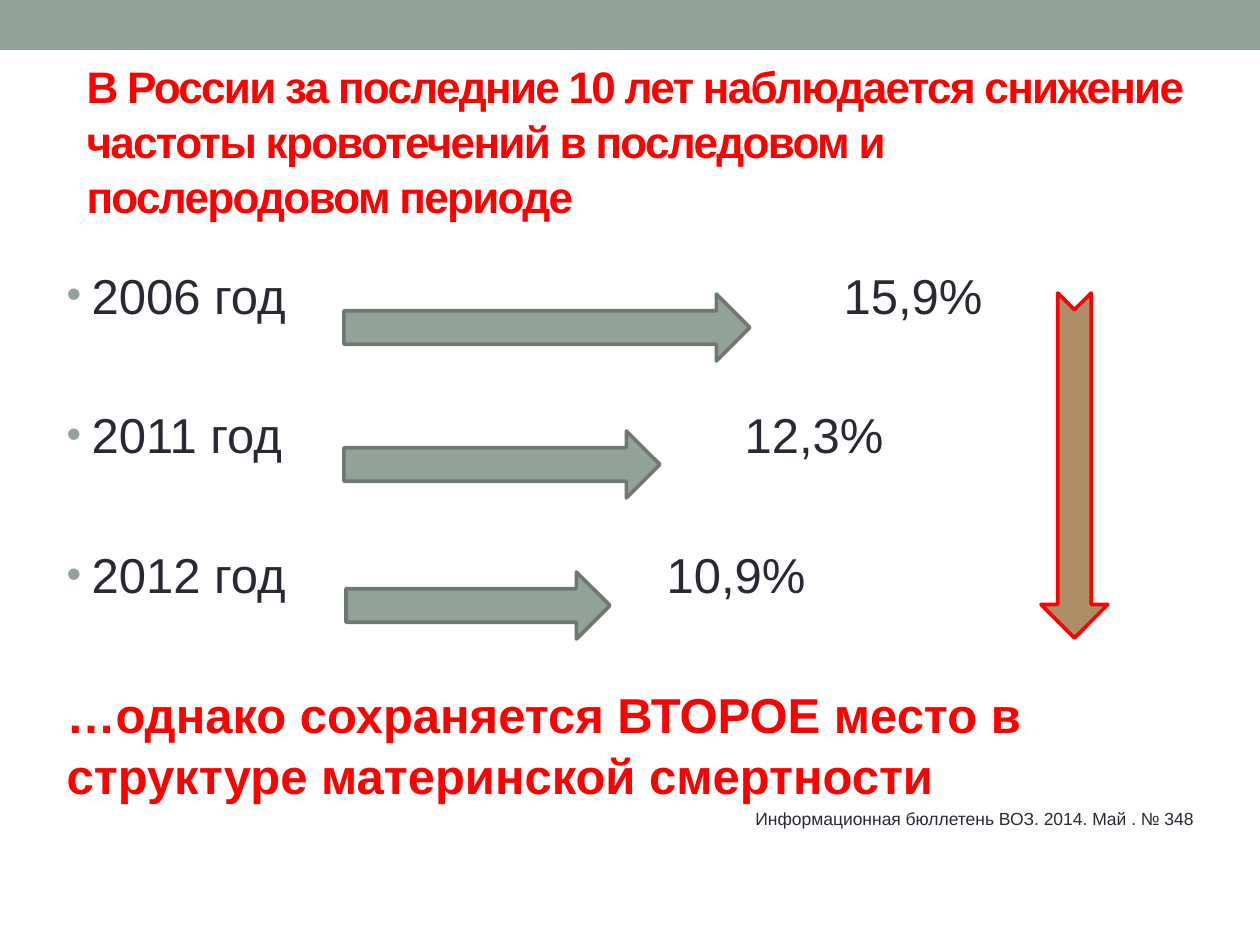
from lxml import etree
from pptx import Presentation
from pptx.dml.color import RGBColor
from pptx.enum.shapes import MSO_SHAPE
from pptx.enum.text import MSO_ANCHOR, MSO_AUTO_SIZE, PP_ALIGN
from pptx.oxml.ns import qn
from pptx.util import Pt

PX = 914400 // 126
FONT = "Arial"
COLORS = {
    "sage": "93A299",
    "sage_dark": "6D7871",
    "tan": "AD8F67",
    "red": "FF0000",
    "ink": "292934",
}
# year, share, left of the share, arrow box (all relative to the body box)
ROWS = [
    ("2006 год", "15,9%", 777, (290, 38, 406, 67)),
    ("2011 год", "12,3%", 678, (290, 175, 316, 67)),
    ("2012 год", "10,9%", 600, (292, 316, 264, 67)),
]
ROW_GAP = Pt(44.5)


def rgb(name):
    return RGBColor.from_string(COLORS[name])


def place(shape, box):
    shape.left, shape.top, shape.width, shape.height = (n * PX for n in box)


def add_run(paragraph, text, size, color, bold=False):
    run = paragraph.add_run()
    run.text = text
    font = run.font
    font.name, font.size, font.bold = FONT, Pt(size), bold
    font.color.rgb = rgb(color)
    return run


def add_block(slide, kind, box, fill, line=None, rotation=0):
    shape = slide.shapes.add_shape(kind, *(n * PX for n in box))
    shape.shadow.inherit = False
    shape.rotation = rotation
    shape.fill.solid()
    shape.fill.fore_color.rgb = rgb(fill)
    if line:
        shape.line.color.rgb = rgb(line)
        shape.line.width = Pt(2.08)
    else:
        shape.line.fill.background()


def format_list(paragraph, indent=0, tab=None):
    """Bulleted with a tab stop when tab is given, otherwise plain."""
    properties = paragraph._p.get_or_add_pPr()
    properties.set("marL", str(indent * PX))
    properties.set("indent", str(-indent * PX))
    if tab is None:
        etree.SubElement(properties, qn("a:buNone"))
        return
    bullet_color = etree.SubElement(properties, qn("a:buClr"))
    etree.SubElement(bullet_color, qn("a:srgbClr"), val=COLORS["sage"])
    etree.SubElement(properties, qn("a:buSzPct"), val="85000")
    etree.SubElement(properties, qn("a:buFont"), typeface=FONT)
    etree.SubElement(properties, qn("a:buChar"), char="•")
    tabs = etree.SubElement(properties, qn("a:tabLst"))
    etree.SubElement(tabs, qn("a:tab"), pos=str(tab * PX), algn="l")


def fill_title(slide, box):
    title = slide.shapes.title
    place(title, box)
    frame = title.text_frame
    frame.auto_size = MSO_AUTO_SIZE.NONE
    frame.vertical_anchor = MSO_ANCHOR.MIDDLE
    paragraph = frame.paragraphs[0]
    paragraph.alignment = PP_ALIGN.LEFT
    paragraph.line_spacing = 1.04
    text = ("В России за последние 10 лет наблюдается снижение частоты "
            "кровотечений в последовом и послеродовом периоде")
    run = add_run(paragraph, text, 25.2, "red", bold=True)
    run.font._element.set("spc", "-100")


def fill_body(slide, box):
    body = slide.placeholders[1]
    place(body, box)
    frame = body.text_frame
    frame.auto_size = MSO_AUTO_SIZE.NONE
    left, top = box[:2]

    for index, (year, share, tab, arrow) in enumerate(ROWS):
        paragraph = frame.add_paragraph() if index else frame.paragraphs[0]
        format_list(paragraph, 25, tab)
        paragraph.line_spacing = 1.05
        paragraph.space_before = ROW_GAP if index else 0
        add_run(paragraph, f"{year}\t{share}", 28, "ink")
        x, y, width, height = arrow
        add_block(slide, MSO_SHAPE.RIGHT_ARROW,
                  (left + x, top + y, width, height), "sage", "sage_dark")

    conclusion = frame.add_paragraph()
    format_list(conclusion)
    conclusion.line_spacing = 1.05
    conclusion.space_before = ROW_GAP
    add_run(conclusion, "…однако сохраняется ВТОРОЕ место в структуре "
            "материнской смертности", 28, "red", bold=True)

    citation = frame.add_paragraph()
    format_list(citation)
    citation.alignment = PP_ALIGN.RIGHT
    citation.space_before = Pt(2)
    add_run(citation, "Информационная бюллетень ВОЗ. 2014. Май . № 348", 10, "ink")


def add_trend_arrow(slide, box):
    """Downward arrow filling the box: a right arrow turned by 90 degrees."""
    left, top, width, height = box
    shift = (height - width) // 2
    add_block(slide, MSO_SHAPE.NOTCHED_RIGHT_ARROW,
              (left - shift, top + shift, height, width), "tan", "red", 90)


def main():
    presentation = Presentation()
    presentation.slide_width, presentation.slide_height = 1260 * PX, 945 * PX
    slide = presentation.slides.add_slide(presentation.slide_layouts[1])
    add_block(slide, MSO_SHAPE.RECTANGLE, (0, 0, 1260, 50), "sage")
    fill_title(slide, (74, 55, 1134, 170))
    fill_body(slide, (54, 256, 1152, 645))
    add_trend_arrow(slide, (1041, 293, 67, 345))
    presentation.save("out.pptx")


if __name__ == "__main__":
    main()
